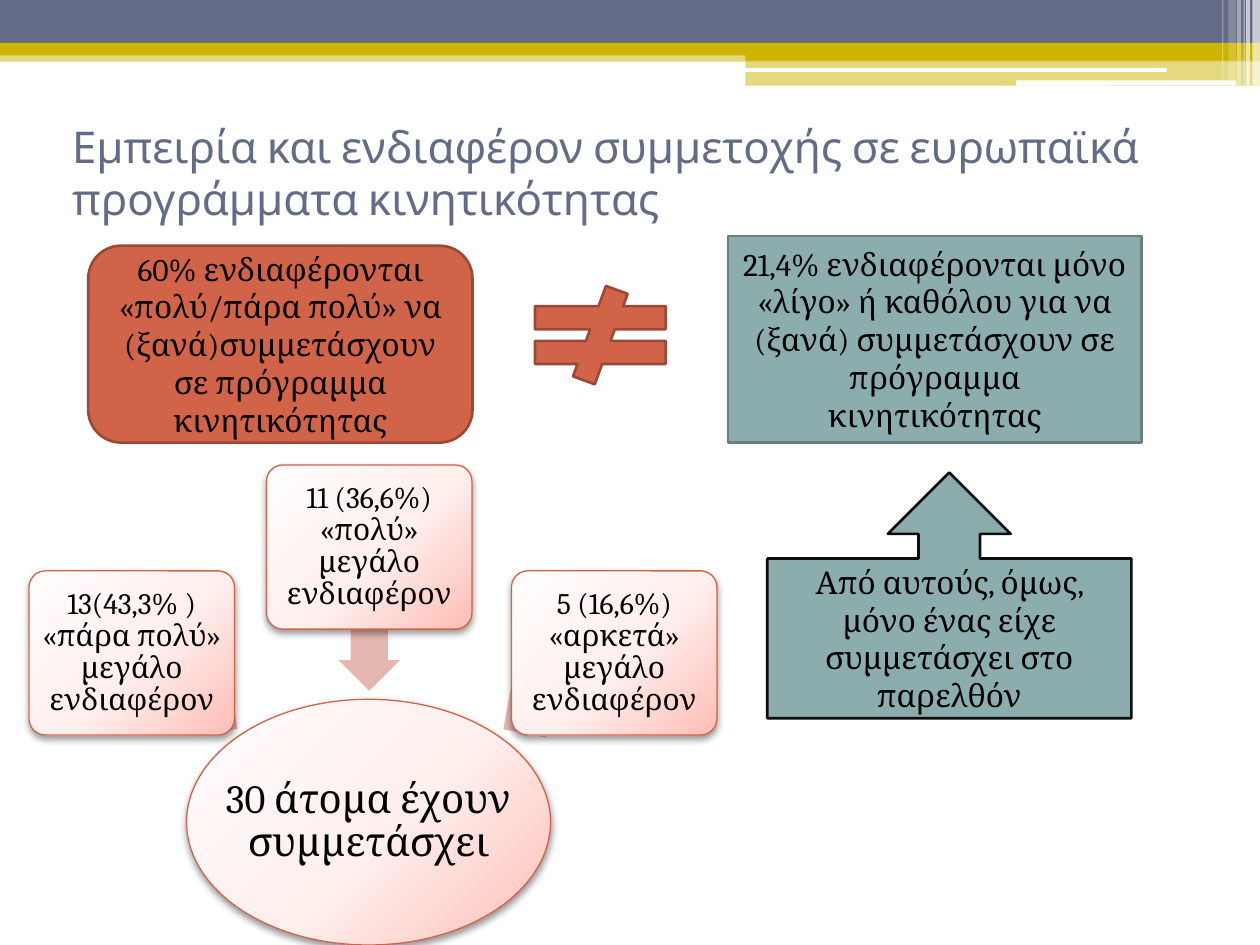
from dataclasses import dataclass
from lxml import etree
from pptx import Presentation
from pptx.dml.color import RGBColor
from pptx.enum import shapes, text
from pptx.oxml import parse_xml
from pptx.oxml.ns import nsdecls, qn
from pptx.util import Pt

SLATE = RGBColor(0x64, 0x6B, 0x86)
GOLD = RGBColor(0xCC, 0xB4, 0x00)
WHITE = RGBColor(0xFF, 0xFF, 0xFF)
BLACK = RGBColor(0x00, 0x00, 0x00)
NEAR_BLACK = RGBColor(0x0D, 0x0D, 0x0D)
RUST = RGBColor(0xD1, 0x63, 0x49)
DARK_RUST = RGBColor(0x9B, 0x49, 0x36)
TEAL = RGBColor(0x8C, 0xAD, 0xAE)
DARK_TEAL = RGBColor(0x68, 0x80, 0x81)
ROSE = RGBColor(0xE5, 0xB7, 0xB1)
BLUSH_STOPS = ((0, RGBColor(0xFF, 0xFE, 0xFE)), (55, RGBColor(0xFF, 0xEF, 0xED)),
               (100, RGBColor(0xFF, 0xBD, 0xB5)))
KIND = shapes.MSO_SHAPE


@dataclass
class Box:
    left: float
    top: float
    width: float
    height: float

    def emu(self):
        return [Pt(v) for v in (self.left, self.top, self.width, self.height)]


@dataclass
class Band:
    box: Box
    color: RGBColor
    opacity: int = 100
    kind: int = KIND.RECTANGLE


@dataclass
class Statement:
    kind: int
    box: Box
    fill: RGBColor
    line: RGBColor
    words: str = ""


@dataclass
class Group:
    box: Box
    words: str
    arrow: Box
    angle: float


BANDS = [
    Band(Box(0, 28.8, 720, 6.5), GOLD, 50),
    Band(Box(0, 0, 720, 24.5), SLATE),
    Band(Box(0, 24.5, 720, 7.2), GOLD),
    Band(Box(426, 28, 294, 6.6), GOLD),
    Band(Box(426, 34.6, 294, 14.4), GOLD, 50),
    Band(Box(425.5, 39, 241.2, 2.2), WHITE, kind=KIND.ROUNDED_RECTANGLE),
    Band(Box(580.5, 46, 126, 2.9), WHITE, kind=KIND.ROUNDED_RECTANGLE),
] + [Band(Box(left, 0, width, height), WHITE, opacity)
     for left, width, height, opacity in [
         (715.7, 4.3, 49, 65), (712, 2.2, 49, 65), (710.6, 0.7, 49, 60),
         (707, 2.2, 49, 40), (702, 4.3, 46, 20), (698.4, 0.7, 46, 30)]]

STATEMENTS = [
    Statement(KIND.ROUNDED_RECTANGLE, Box(50.4, 140.4, 219.6, 112.5), RUST, DARK_RUST,
              "60% ενδιαφέρονται «πολύ/πάρα πολύ» να (ξανά)συμμετάσχουν "
              "σε πρόγραμμα κινητικότητας"),
    Statement(KIND.RECTANGLE, Box(416, 134.8, 236.2, 118), TEAL, DARK_TEAL,
              "21,4% ενδιαφέρονται μόνο «λίγο» ή καθόλου για να (ξανά) "
              "συμμετάσχουν σε πρόγραμμα κινητικότητας"),
    Statement(KIND.UP_ARROW_CALLOUT, Box(438.5, 270, 208, 140.4), TEAL, NEAR_BLACK,
              "Από αυτούς, όμως, μόνο ένας είχε συμμετάσχει στο παρελθόν"),
    Statement(KIND.MATH_NOT_EQUAL, Box(292.3, 163.4, 101.5, 56.2), RUST, DARK_RUST),
]

CARD_W, CARD_H = 117.4, 93.8
GROUPS = [
    Group(Box(16.6, 326.2, CARD_W, CARD_H), "13(43,3% ) «πάρα πολύ» μεγάλο ενδιαφέρον",
          Box(68.4, 377.3, 74.2, 35.3), 215.5),
    Group(Box(152.3, 265.7, CARD_W, CARD_H), "11 (36,6%) «πολύ» μεγάλο ενδιαφέρον",
          Box(170, 336.2, 82, 35.3), 270),
    Group(Box(292.3, 326.2, CARD_W, CARD_H), "5 (16,6%) «αρκετά» μεγάλο ενδιαφέρον",
          Box(280.8, 377.3, 77, 35.3), 325.4),
]


def write(tf, words: str, *, size: float, font="Cambria", color=BLACK,
          align=text.PP_ALIGN.CENTER, spacing=None, inset=None):
    tf.word_wrap = True
    tf.auto_size = text.MSO_AUTO_SIZE.NONE
    tf.vertical_anchor = text.MSO_ANCHOR.MIDDLE
    if inset is not None:
        tf.margin_left = tf.margin_right = tf.margin_top = tf.margin_bottom = Pt(inset)
    p = tf.paragraphs[0]
    p.alignment = align
    p.line_spacing = spacing
    r = p.add_run()
    r.text = words
    r.font.size, r.font.name = Pt(size), font
    r.font.color.rgb = color


def add_shape(s, kind: int, box: Box, fill=None, line=None, line_width=1.5):
    sp = s.shapes.add_shape(kind, *box.emu())
    sp.shadow.inherit = False
    if fill is not None:
        sp.fill.solid()
        sp.fill.fore_color.rgb = fill
    if line is None:
        sp.line.fill.background()
    else:
        sp.line.color.rgb = line
        sp.line.width = Pt(line_width)
    return sp


def add_band(s, band: Band):
    sp = add_shape(s, band.kind, band.box, band.color)
    if band.opacity < 100:
        color = sp._element.spPr.find(qn("a:solidFill"))[0]
        etree.SubElement(color, qn("a:alpha"), val=str(band.opacity * 1000))


def add_blush_shape(s, kind: int, box: Box, words: str, size: float, inset: float):
    """Gradient shape with a soft shadow and a label across its whole width."""
    sp = add_shape(s, kind, box, WHITE, RUST, 0.75)
    if kind == KIND.ROUNDED_RECTANGLE:
        sp.adjustments[0] = 0.1
    spPr = sp._element.spPr
    stops = "".join(f'<a:gs pos="{pos * 1000}"><a:srgbClr val="{color}"/></a:gs>'
                    for pos, color in BLUSH_STOPS)
    spPr.replace(spPr.find(qn("a:solidFill")), parse_xml(
        f'<a:gradFill {nsdecls("a")} rotWithShape="1"><a:gsLst>{stops}</a:gsLst>'
        '<a:path path="circle"><a:fillToRect l="-40000" t="-90000" r="140000" b="190000"/>'
        '</a:path></a:gradFill>'))
    spPr.find(qn("a:effectLst")).append(parse_xml(
        f'<a:outerShdw {nsdecls("a")} blurRad="{Pt(4.1)}" dist="{Pt(2)}" dir="5400000" '
        'rotWithShape="0"><a:srgbClr val="000000"><a:alpha val="40000"/></a:srgbClr>'
        '</a:outerShdw>'))
    label = s.shapes.add_textbox(*box.emu())
    write(label.text_frame, words, size=size, spacing=0.9, inset=inset)


def add_group(s, group: Group):
    arrow = add_shape(s, KIND.LEFT_ARROW, group.arrow, ROSE)
    arrow.adjustments[0], arrow.adjustments[1] = 0.6, 0.5
    arrow.rotation = group.angle
    add_blush_shape(s, KIND.ROUNDED_RECTANGLE, group.box, group.words, 17, 2.7)


def main():
    prs = Presentation()
    prs.slide_width, prs.slide_height = Pt(720), Pt(540)
    s = prs.slides.add_slide(prs.slide_layouts[5])

    # Header bands
    for band in BANDS:
        add_band(s, band)

    # Title
    title = s.shapes.title
    title.left, title.top, title.width, title.height = Box(34, 56.2, 648, 84.2).emu()
    write(title.text_frame,
          "Εμπειρία και ενδιαφέρον συμμετοχής σε ευρωπαϊκά προγράμματα κινητικότητας",
          size=25, font="Cabin", color=SLATE, align=text.PP_ALIGN.LEFT)

    # Contrasting statements
    for item in STATEMENTS:
        sp = add_shape(s, item.kind, item.box, item.fill, item.line)
        if item.words:
            write(sp.text_frame, item.words, size=18)

    # Participants and their levels of interest
    add_blush_shape(s, KIND.OVAL, Box(106.6, 399.6, 208, 140.4),
                    "30 άτομα έχουν συμμετάσχει", 23, 1.4)
    for group in GROUPS:
        add_group(s, group)

    prs.save("out.pptx")


if __name__ == "__main__":
    main()
